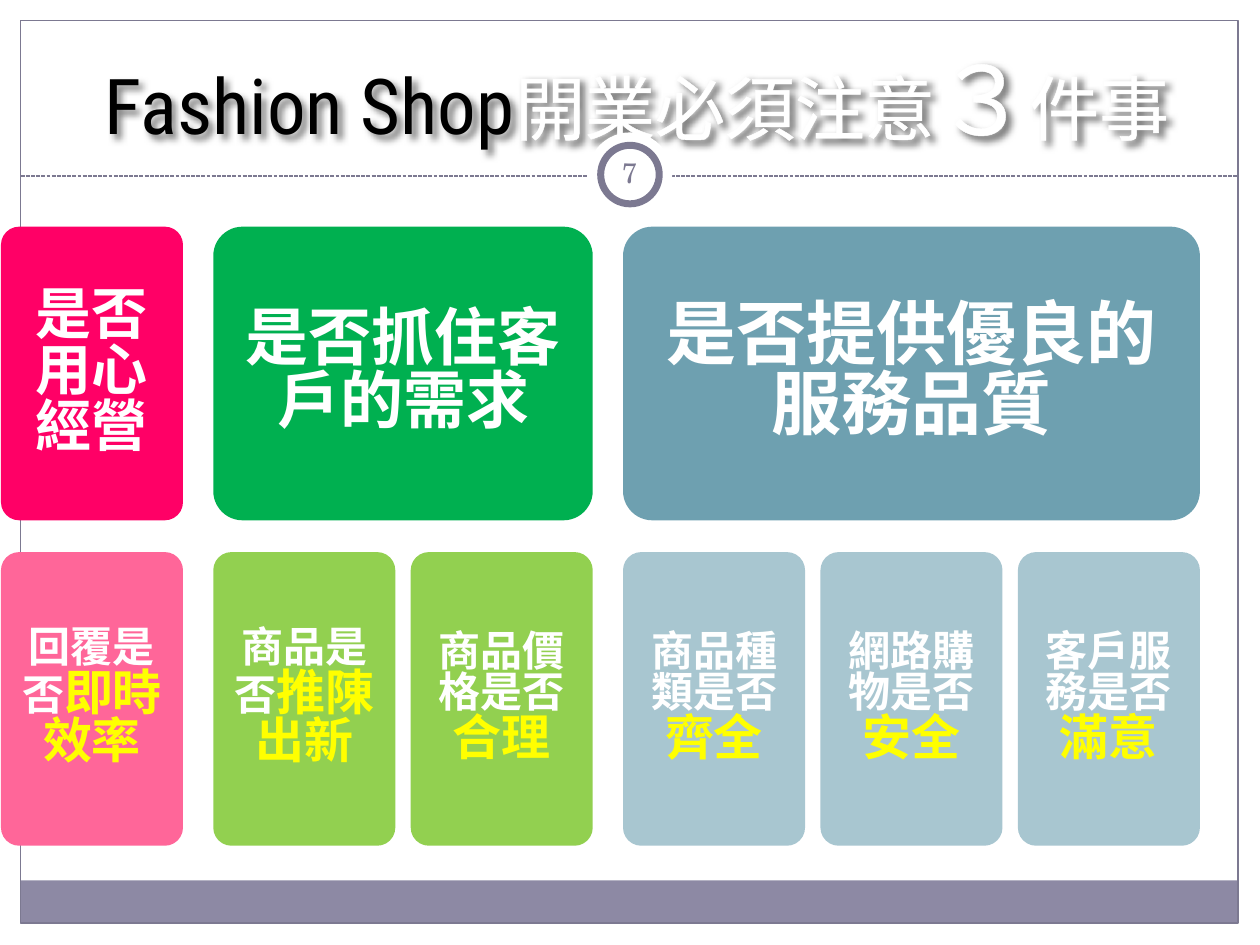
from dataclasses import dataclass
from typing import NamedTuple

from lxml.etree import SubElement
from pptx import Presentation
from pptx.dml.color import RGBColor
from pptx.enum.dml import MSO_LINE
from pptx.enum.shapes import MSO_CONNECTOR, MSO_SHAPE as Shape
from pptx.enum.text import MSO_ANCHOR as Anchor, PP_ALIGN as Align
from pptx.oxml import parse_xml
from pptx.oxml.ns import qn
from pptx.util import Cm, Pt

WHITE = RGBColor(0xFF, 0xFF, 0xFF)
BLACK = RGBColor(0x00, 0x00, 0x00)
YELLOW = RGBColor(0xFF, 0xFF, 0x00)
PURPLE = RGBColor(0x7C, 0x79, 0x91)
LILAC = RGBColor(0x8D, 0x89, 0xA4)
RED = RGBColor(0xFF, 0x00, 0x66)
PINK = RGBColor(0xFF, 0x66, 0x99)
GREEN = RGBColor(0x00, 0xB0, 0x50)
LIME = RGBColor(0x92, 0xD0, 0x50)
BLUE = RGBColor(0x6E, 0xA0, 0xB0)
PALE_BLUE = RGBColor(0xA8, 0xC6, 0xD0)

CJK_FONT = "Noto Sans CJK SC"
LATIN_FONT = "Roboto Condensed"
NUMBER_FONT = "TeX Gyre Schola"
DRAWING_NS = "http://schemas.openxmlformats.org/drawingml/2006/main"

# Card grid, in centimetres
GRID_LEFT, TOP_ROW, BOTTOM_ROW = 0.02, 4.57, 11.13
CARD_WIDTH, CARD_HEIGHT = 3.67, 5.92
CARD_GAP, GROUP_GAP = 0.31, 0.61
CARD_LINE_SPACING = 0.83


class Span(NamedTuple):
    text: str
    size: float
    color: RGBColor = WHITE
    font: str = CJK_FONT
    bold: bool = False
    outline: float = 0


class Check(NamedTuple):
    question: str
    keyword: str


@dataclass
class Topic:
    heading: str
    size: int
    inset: float
    color: RGBColor
    check_color: RGBColor
    checks: list[Check]


TOPICS = [
    Topic("是否用心經營", 32, 0.33, RED, PINK, [Check("回覆是否", "即時效率")]),
    Topic("是否抓住客戶的需求", 36, 0.38, GREEN, LIME,
          [Check("商品是否", "推陳出新"), Check("商品價格是否", "合理")]),
    Topic("是否提供優良的服務品質", 40, 0.43, BLUE, PALE_BLUE,
          [Check("商品種類是否", "齊全"), Check("網路購物是否", "安全"),
           Check("客戶服務是否", "滿意")]),
]

TITLE = [
    Span("Fashion Shop", 44, BLACK, LATIN_FONT, outline=1),
    Span("開業必須注意", 40, outline=1.45),
    Span("３", 54, outline=1.45),
    Span("件事", 40, outline=1.45),
]


def write_spans(text_frame, spans: list[Span], anchor, inset: float) -> None:
    """Write one centred paragraph made of formatted runs."""
    text_frame.word_wrap = True
    text_frame.vertical_anchor = anchor
    text_frame.margin_left = text_frame.margin_right = Cm(inset)
    text_frame.margin_top = text_frame.margin_bottom = Cm(inset)
    paragraph = text_frame.paragraphs[0]
    paragraph.alignment = Align.CENTER
    for span in spans:
        run = paragraph.add_run()
        run.text = span.text
        font = run.font
        font.size, font.bold, font.name = Pt(span.size), span.bold, span.font
        font.color.rgb = span.color
        properties = run._r.get_or_add_rPr()
        SubElement(properties, qn("a:ea"), typeface=span.font)
        if span.outline:
            properties.insert(0, parse_xml(
                f'<a:ln xmlns:a="{DRAWING_NS}" w="{Pt(span.outline)}"><a:solidFill>'
                f'<a:srgbClr val="{WHITE}"/></a:solidFill></a:ln>'))


def add_block(slide, kind, left: float, top: float, width: float, height: float,
              fill: RGBColor | None = None, line: RGBColor | None = None,
              line_width: float = 0.75):
    """Add a preset shape placed in centimetres."""
    shape = slide.shapes.add_shape(kind, Cm(left), Cm(top), Cm(width), Cm(height))
    shape.shadow.inherit = False
    if fill is None:
        shape.fill.background()
    else:
        shape.fill.solid()
        shape.fill.fore_color.rgb = fill
    if line is None:
        shape.line.fill.background()
    else:
        shape.line.color.rgb = line
        shape.line.width = Pt(line_width)
    return shape


def add_card(slide, left: float, top: float, width: float, fill: RGBColor,
             spans: list[Span], inset: float) -> None:
    card = add_block(slide, Shape.ROUNDED_RECTANGLE, left, top, width, CARD_HEIGHT, fill)
    card.adjustments[0] = 0.1
    write_spans(card.text_frame, spans, Anchor.MIDDLE, inset)
    card.text_frame.paragraphs[0].line_spacing = CARD_LINE_SPACING


def add_frame(slide) -> None:
    """Footer band, border, dashed rule and ringed slide number."""
    add_block(slide, Shape.RECTANGLE, 0.41, 17.75, 24.54, 0.86, LILAC)
    add_block(slide, Shape.RECTANGLE, 0.42, 0.42, 24.54, 18.19, line=PURPLE)
    rule = slide.shapes.add_connector(
        MSO_CONNECTOR.STRAIGHT, Cm(0.42), Cm(3.55), Cm(24.96), Cm(3.55))
    rule.line.color.rgb = PURPLE
    rule.line.width = Pt(0.75)
    rule.line.dash_style = MSO_LINE.SQUARE_DOT
    SubElement(rule._element.spPr, qn("a:effectLst"))
    add_block(slide, Shape.OVAL, 11.85, 2.67, 1.7, 1.7, WHITE)
    add_block(slide, Shape.OVAL, 12.11, 2.93, 1.18, 1.18, WHITE, PURPLE, 4)
    number = slide.shapes.add_textbox(Cm(12.06), Cm(2.87), Cm(1.27), Cm(1.22))
    write_spans(number.text_frame, [Span("7", 16, PURPLE, NUMBER_FONT)],
                Anchor.MIDDLE, 0.13)


def format_title(title) -> None:
    title.left, title.top, title.width, title.height = Cm(0.99), Cm(0.99), Cm(23.7), Cm(2.11)
    write_spans(title.text_frame, TITLE, Anchor.BOTTOM, 0)
    # Soft shadow cast by the letters
    title._element.spPr.append(parse_xml(
        f'<a:effectLst xmlns:a="{DRAWING_NS}">'
        f'<a:outerShdw blurRad="{Pt(4)}" dist="{Pt(3)}" dir="2700000" algn="tl">'
        f'<a:srgbClr val="{BLACK}"><a:alpha val="50000"/></a:srgbClr>'
        '</a:outerShdw></a:effectLst>'))


def add_topics(slide) -> None:
    """Each heading spans the row of its checks."""
    left = GRID_LEFT
    pitch = CARD_WIDTH + CARD_GAP
    for topic in TOPICS:
        width = len(topic.checks) * pitch - CARD_GAP
        add_card(slide, left, TOP_ROW, width, topic.color,
                 [Span(topic.heading, topic.size, bold=True)], topic.inset)
        for index, check in enumerate(topic.checks):
            spans = [Span(check.question, 24, bold=True),
                     Span(check.keyword, 28, YELLOW, bold=True)]
            add_card(slide, left + index * pitch, BOTTOM_ROW, CARD_WIDTH,
                     topic.check_color, spans, 0.25)
        left += width + GROUP_GAP


def main() -> None:
    presentation = Presentation()
    presentation.slide_width, presentation.slide_height = Cm(25.4), Cm(19.05)
    slide = presentation.slides.add_slide(presentation.slide_layouts[5])
    format_title(slide.shapes.title)
    add_frame(slide)
    add_topics(slide)
    presentation.save("out.pptx")


if __name__ == "__main__":
    main()
